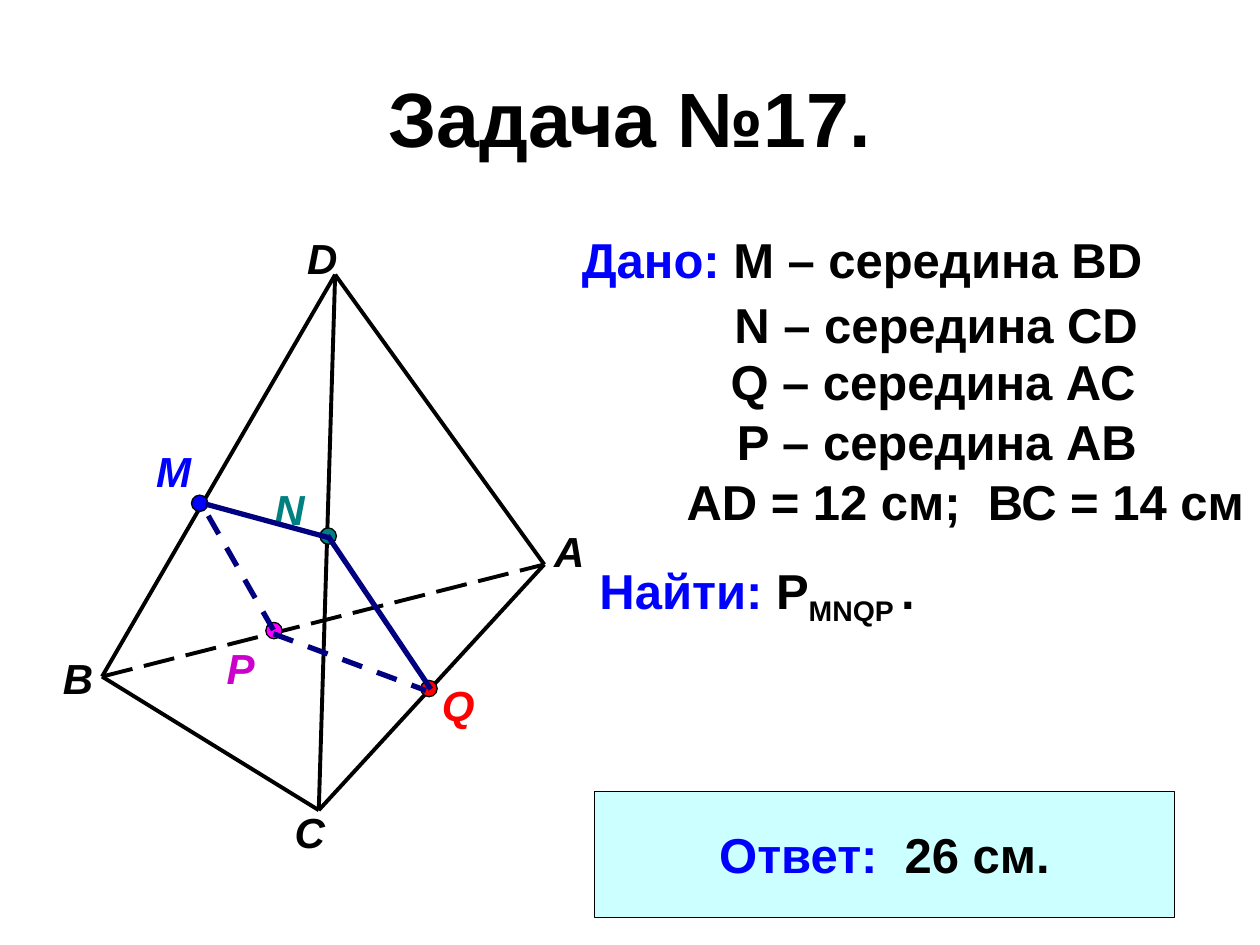
"""Build the geometry slide with a tetrahedron, its midpoint section and the answer."""
from lxml import etree
from pptx import Presentation
from pptx import util as u
from pptx.dml.color import RGBColor
from pptx.enum import dml, shapes, text
from pptx.oxml.ns import qn

BLACK = RGBColor(0, 0, 0)
BLUE = RGBColor(0, 0, 255)
TEAL = RGBColor(0, 128, 128)
RED = RGBColor(255, 0, 0)
MAGENTA = RGBColor(255, 0, 255)
PURPLE = RGBColor(204, 0, 204)
NAVY = RGBColor(0, 0, 128)
PALE_CYAN = RGBColor(204, 255, 255)


def write(shape, runs, **font_format):
    frame = shape.text_frame
    para = frame.paragraphs[0]
    for words, color, baseline in runs:
        span = para.add_run()
        span.text = words
        for name, value in {"name": "Arial", "bold": True, **font_format}.items():
            setattr(span.font, name, value)
        span.font.color.rgb = color
        if baseline:
            span.font._element.set("baseline", str(baseline * 1000))
    return frame


def draw_line(page, start, end, color, width, dash):
    line = page.shapes.add_connector(
        shapes.MSO_CONNECTOR.STRAIGHT, *[u.Inches(v) for v in (*start, *end)])
    line.line.color.rgb = color
    line.line.width = u.Pt(width)
    if dash:
        line.line.dash_style = dash
    etree.SubElement(line._element.spPr, qn("a:effectLst"))


deck = Presentation()
deck.slide_width, deck.slide_height = u.Inches(10), u.Inches(7.5)
page = deck.slides.add_slide(deck.slide_layouts[5])

title = page.shapes.title
title.left, title.top, title.width, title.height = [u.Inches(v) for v in (0.5, 0.3, 9, 1.25)]
frame = write(title, [("Задача №17.", BLACK, 0)], size=u.Pt(44))
frame.vertical_anchor = text.MSO_ANCHOR.MIDDLE
frame.paragraphs[0].alignment = text.PP_ALIGN.CENTER

vertices = {"A": (4.32, 4.48), "B": (0.81, 5.37), "C": (2.53, 6.43), "D": (2.66, 2.18)}
for start, end in ("DB", "DC", "BC", "AC", "BA", "DA"):
    dash = dml.MSO_LINE.LONG_DASH if start + end == "BA" else None
    draw_line(page, vertices[start], vertices[end], BLACK, 2.25, dash)

letters = [
    ("A", 4.3, 4.12, 0.44, BLACK),
    ("B", 0.4, 5.13, 0.44, BLACK),
    ("D", 2.34, 1.8, 0.44, BLACK),
    ("C", 2.24, 6.35, 0.44, BLACK),
    ("N", 2.08, 3.79, 0.44, TEAL),
    ("M", 1.14, 3.49, 0.48, BLUE),
    ("Р", 1.7, 5.05, 0.42, PURPLE),
    ("Q", 3.41, 5.34, 0.46, RED),
]
statements = [
    (4.52, 1.77, 4.77, [("Дано: ", BLUE, 0), ("М – середина BD", BLACK, 0)]),
    (5.73, 2.29, 3.41, [("N – середина CD", BLACK, 0)]),
    (5.7, 2.74, 3.43, [("Q – середина АС", BLACK, 0)]),
    (5.75, 3.22, 3.39, [("P – середина АВ", BLACK, 0)]),
    (5.35, 3.69, 4.65, [("АD = 12 см;  ВС = 14 см", BLACK, 0)]),
    (4.66, 4.4, 2.84, [("Найти: ", BLUE, 0), ("P", BLACK, 0),
                       ("MNQP ", BLACK, -25), (".", BLACK, 0)]),
]
labels = [(left, top, width, 0.5, [(letter, color, 0)], {"size": u.Pt(24), "italic": True})
          for letter, left, top, width, color in letters]
labels += [(left, top, width, 0.57, runs, {"size": u.Pt(28)})
           for left, top, width, runs in statements]
for left, top, width, height, runs, font_format in labels:
    box = page.shapes.add_textbox(*[u.Inches(v) for v in (left, top, width, height)])
    frame = write(box, runs, **font_format)
    frame.word_wrap = False
    frame.auto_size = text.MSO_AUTO_SIZE.SHAPE_TO_FIT_TEXT

midpoints = [(1.52, 3.93, BLUE), (2.54, 4.19, TEAL), (3.34, 5.4, RED), (2.11, 4.94, MAGENTA)]
filled = [(shapes.MSO_SHAPE.OVAL, left, top, 0.13, 0.13, color) for left, top, color in midpoints]
filled.append((shapes.MSO_SHAPE.RECTANGLE, 4.72, 6.28, 4.6, 1, PALE_CYAN))
for kind, left, top, width, height, color in filled:
    shape = page.shapes.add_shape(kind, *[u.Inches(v) for v in (left, top, width, height)])
    shape.shadow.inherit = False
    shape.fill.solid()
    shape.fill.fore_color.rgb = color
    shape.line.color.rgb = BLACK
    shape.line.width = u.Pt(0.75)

answer = shape
frame = write(answer, [("Ответ:  ", BLUE, 0), ("26 см.", BLACK, 0)], size=u.Pt(28))
frame.word_wrap = False
frame.vertical_anchor = text.MSO_ANCHOR.MIDDLE
frame.paragraphs[0].alignment = text.PP_ALIGN.CENTER

section = [
    ((1.63, 4), (2.62, 4.27), None),
    ((2.6, 4.25), (3.42, 5.47), None),
    ((2.17, 5.03), (3.38, 5.48), dml.MSO_LINE.DASH),
    ((2.17, 5), (1.6, 4), dml.MSO_LINE.DASH),
]
for start, end, dash in section:
    draw_line(page, start, end, NAVY, 3, dash)

deck.save("out.pptx")
